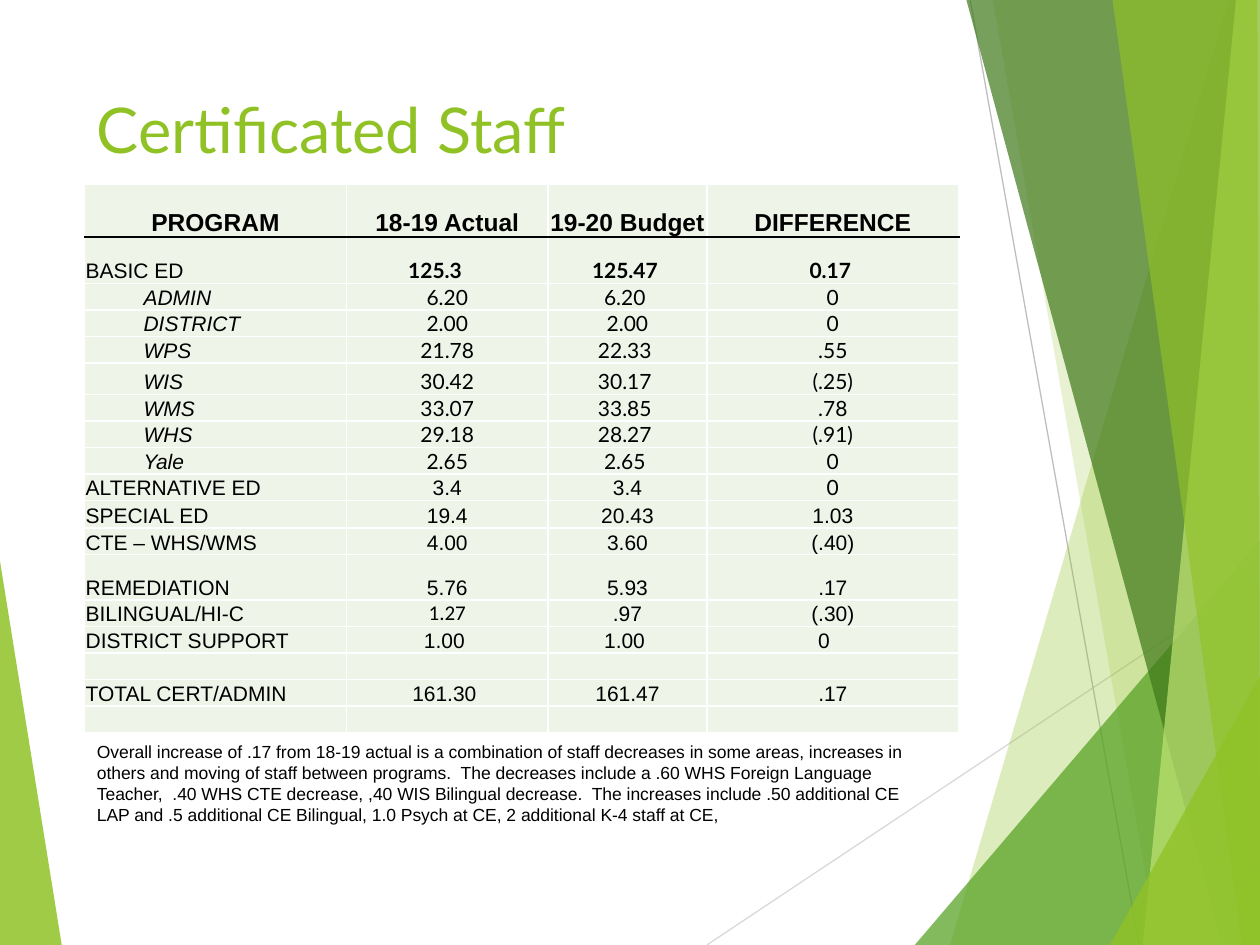
from lxml import etree
from pptx import Presentation
from pptx.dml.color import RGBColor
from pptx.enum.shapes import MSO_CONNECTOR
from pptx.enum.text import MSO_ANCHOR, PP_ALIGN
from pptx.oxml.ns import qn
from pptx.util import Inches, Pt

STRAIGHT = MSO_CONNECTOR.STRAIGHT
BOTTOM = MSO_ANCHOR.BOTTOM
LEFT, CENTER = PP_ALIGN.LEFT, PP_ALIGN.CENTER

COLORS = {
    "lime": "90C226", "green": "54A021", "dark": "3F7819", "pale": "C0E474",
    "grey": "BFBFBF", "light": "D9D9D9", "cell": "EEF4E8",
    "white": "FFFFFF", "black": "000000",
}

# Decorative facets: colour, opacity in percent, corner points in inches
LEFT_FACET = ("lime", 85, [(-0.01, 4.39), (0.49, 7.5), (-0.01, 7.5)])
RIGHT_FACETS = [
    ("lime", 30, [(9.75, 0), (7.54, 7.5), (10.01, 7.5), (10.01, 0)]),
    ("lime", 20, [(7.88, 0), (9.19, 7.5), (10.01, 7.5), (10.01, 0)]),
    ("green", 72, [(7.26, 7.5), (10, 4.29), (10.01, 7.5)]),
    ("dark", 70, [(7.67, 0), (9.7, 7.5), (10.01, 7.5), (10.01, 0)]),
    ("pale", 70, [(9.81, 0), (9.07, 7.5), (10.01, 7.5), (10, 0)]),
    ("lime", 65, [(8.83, 0), (9.86, 7.5), (10, 7.5), (9.98, 0)]),
    ("lime", 80, [(8.81, 7.5), (10.01, 5.35), (10.01, 7.5)]),
]

COLUMN_WIDTHS = [2.08, 1.6, 1.26, 2]
ROW_HEIGHT = 0.21
SPECIAL_HEIGHTS = {0: 0.42, 1: 0.37, 5: 0.25, 10: 0.22, 12: 0.36, 16: 0.2}
STAFF = [
    ("PROGRAM", "18-19 Actual", "19-20 Budget", "DIFFERENCE"),
    ("BASIC ED", "125.3", "125.47 ", "0.17 "),
    ("ADMIN", "6.20", "6.20 ", "0"),
    ("DISTRICT", "2.00", "2.00", "0"),
    ("WPS", "21.78", "22.33 ", ".55"),
    ("WIS", "30.42", "30.17 ", "(.25)"),
    ("WMS", "33.07", "33.85 ", ".78"),
    ("WHS", "29.18", "28.27 ", "(.91)"),
    ("Yale", "2.65", "2.65 ", "0"),
    ("ALTERNATIVE ED", "3.4", "3.4", "0"),
    ("SPECIAL ED", "19.4", "20.43", "1.03"),
    ("CTE – WHS/WMS", "4.00", "3.60", "(.40)"),
    ("REMEDIATION", "5.76", "5.93", ".17"),
    ("BILINGUAL/HI-C", "1.27", ".97", "(.30)"),
    ("DISTRICT SUPPORT", "1.00 ", "1.00 ", "0"),
    ("", "", "", ""),
    ("TOTAL CERT/ADMIN", "161.30 ", "161.47", ".17"),
    ("", "", "", ""),
]
SCHOOL_ROWS = range(2, 9)
FONT_EXCEPTIONS = {(9, 3): "Lato", (13, 1): "Calibri"}
LEFT_INDENTS = {(row, 0): 0.47 for row in SCHOOL_ROWS} | {(1, 1): 0.49}
RIGHT_INDENTS = {(14, 3): 0.15}

NOTE = (
    "Overall increase of .17 from 18-19 actual is a combination of staff "
    "decreases in some areas, increases in others and moving of staff between "
    "programs.  The decreases include a .60 WHS Foreign Language Teacher,  .40 "
    "WHS CTE decrease, ,40 WIS Bilingual decrease.  The increases include .50 "
    "additional CE LAP and .5 additional CE Bilingual, 1.0 Psych at CE, "
    "2 additional K-4 staff at CE,"
)


def rgb(name):
    return RGBColor.from_string(COLORS[name])


class SlideBuilder:
    """Holds the slide and the style shared by its elements."""

    def __init__(self, slide):
        self.slide = slide

    def facet(self, color, opacity, points):
        corners = [(Inches(x), Inches(y)) for x, y in points]
        builder = self.slide.shapes.build_freeform(*corners[0])
        builder.add_line_segments(corners[1:], close=True)
        shape = builder.convert_to_shape()
        shape.shadow.inherit = False
        shape.line.fill.background()
        shape.fill.solid()
        shape.fill.fore_color.rgb = rgb(color)
        fill_color = shape.fill._xPr.find(qn("a:solidFill"))[0]
        etree.SubElement(fill_color, qn("a:alpha"), val=str(opacity * 1000))

    def line(self, start, end, color):
        ends = [Inches(value) for value in (*start, *end)]
        connector = self.slide.shapes.add_connector(STRAIGHT, *ends)
        connector.line.color.rgb = rgb(color)
        connector.line.width = Pt(0.75)
        etree.SubElement(connector._element.spPr, qn("a:effectLst"))

    def font(self, paragraph, name, size, color="black", bold=False, italic=False):
        font = paragraph.font
        font.name, font.size = name, Pt(size)
        font.bold, font.italic = bold, italic
        font.color.rgb = rgb(color)

    def text(self, box, text, name, size, color="black"):
        shape = self.slide.shapes.add_textbox(*[Inches(value) for value in box])
        shape.text_frame.word_wrap = True
        paragraph = shape.text_frame.paragraphs[0]
        paragraph.text = text
        self.font(paragraph, name, size, color)

    def border(self, cell, side, color):
        line = etree.SubElement(cell._tc.get_or_add_tcPr(), qn(f"a:ln{side}"),
                                w=str(Pt(1)))
        fill = etree.SubElement(line, qn("a:solidFill"))
        etree.SubElement(fill, qn("a:srgbClr"), val=COLORS[color])

    def cell(self, cell, row, column, text):
        header = row == 0
        cell.vertical_anchor = BOTTOM
        cell.margin_left = Inches(LEFT_INDENTS.get((row, column), 0.01))
        cell.margin_right = Inches(RIGHT_INDENTS.get((row, column), 0.01))
        cell.margin_top, cell.margin_bottom = Inches(0.01), 0

        # Black rule between the header and the body, white elsewhere
        black_side = {0: "B", 1: "T"}.get(row)
        for side in "LRTB":
            self.border(cell, side, "black" if side == black_side else "white")
        cell.fill.solid()
        cell.fill.fore_color.rgb = rgb("cell")

        paragraph = cell.text_frame.paragraphs[0]
        paragraph.text = text
        label = column == 0 and not header
        indented_value = (row, column) == (1, 1)
        paragraph.alignment = LEFT if label or indented_value else CENTER
        lato = column > 0 and (row == 1 or row in SCHOOL_ROWS)
        name = FONT_EXCEPTIONS.get((row, column), "Lato" if lato else "Arial")
        self.font(paragraph, name, 14 if header else 12,
                  bold=header or (row == 1 and column > 0),
                  italic=label and row in SCHOOL_ROWS)

    def table(self, left, top, rows):
        heights = [SPECIAL_HEIGHTS.get(row, ROW_HEIGHT) for row in range(len(rows))]
        table = self.slide.shapes.add_table(
            len(rows), len(COLUMN_WIDTHS), Inches(left), Inches(top),
            Inches(sum(COLUMN_WIDTHS)), Inches(sum(heights))).table
        table.first_row = table.horz_banding = False
        for column, width in zip(table.columns, COLUMN_WIDTHS):
            column.width = Inches(width)
        for row, height in enumerate(heights):
            table.rows[row].height = Inches(height)
            for column, text in enumerate(rows[row]):
                self.cell(table.cell(row, column), row, column, text)


def main():
    presentation = Presentation()
    presentation.slide_width, presentation.slide_height = Inches(10), Inches(7.5)
    builder = SlideBuilder(
        presentation.slides.add_slide(presentation.slide_layouts[6]))

    # Background decoration
    builder.facet(*LEFT_FACET)
    builder.line((5.61, 7.5), (10.01, 4.57), "light")
    builder.line((7.7, 0), (9.04, 7.5), "grey")
    for facet in RIGHT_FACETS:
        builder.facet(*facet)

    # Title, staff table and note
    builder.text((0.67, 0.67, 6.94, 1.44), "Certificated Staff", "Lato", 36, "lime")
    builder.table(0.67, 1.46, STAFF)
    builder.text((0.67, 5.83, 6.75, 0.94), NOTE, "Arial", 10)

    presentation.save("out.pptx")


if __name__ == "__main__":
    main()
